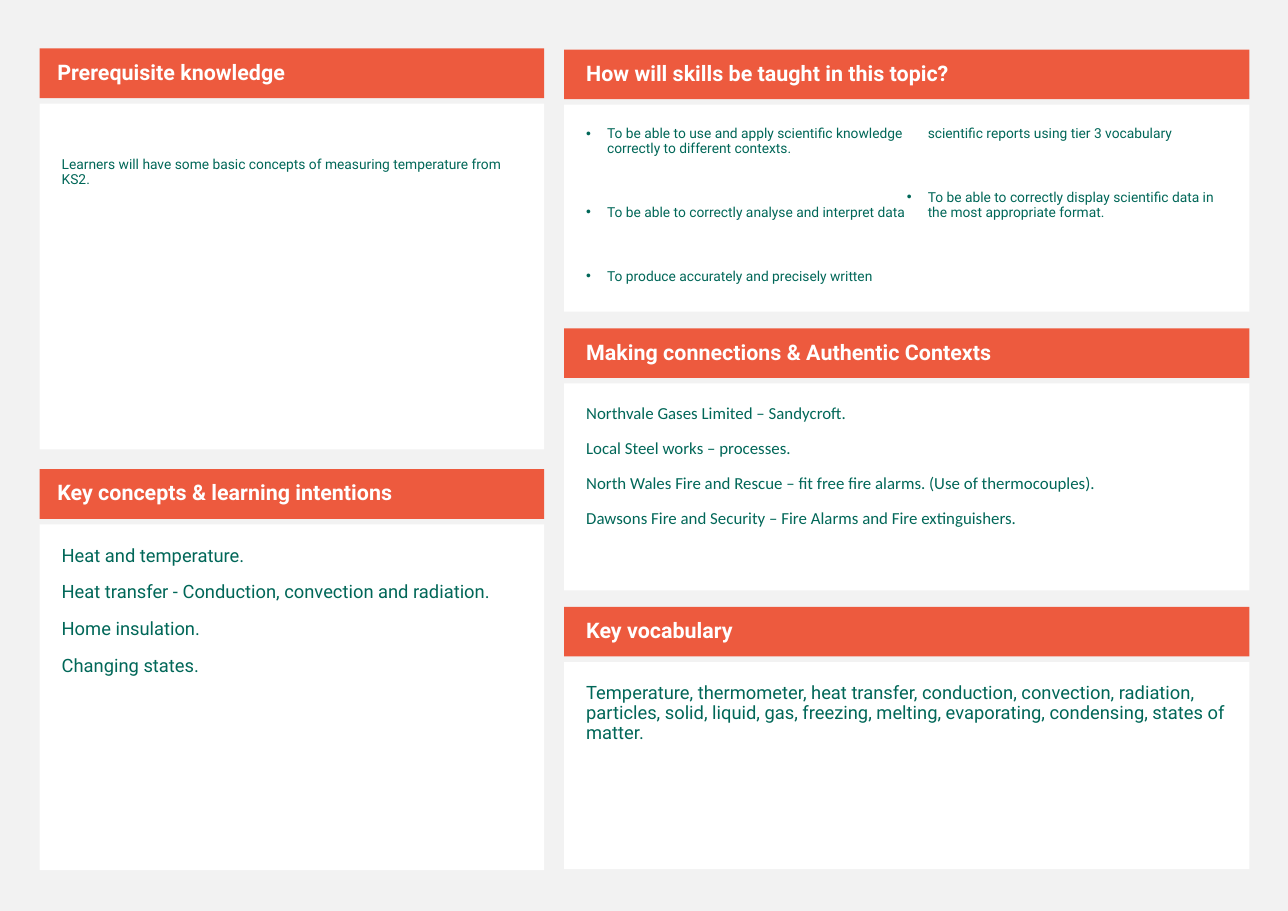
from dataclasses import dataclass

from lxml.etree import SubElement
from pptx import Presentation
from pptx.dml.color import RGBColor
from pptx.enum.text import MSO_ANCHOR, MSO_AUTO_SIZE, PP_ALIGN
from pptx.oxml.ns import qn
from pptx.util import Inches, Pt


@dataclass(frozen=True)
class Theme:
    back: str = "F2F2F2"
    panel: str = "FFFFFF"
    band: str = "ED5A3E"
    heading: str = "FFFFFF"
    body: str = "006758"
    font: str = "Roboto"
    alt_font: str = "Calibri"
    heading_size: int = 14
    large: int = 12
    medium: int = 11
    small: int = 9


T = Theme()

LEFT = [
    ("Prerequisite knowledge",
     ["Learners will have some basic concepts of measuring temperature from KS2."],
     dict(size=T.small, top=0.49)),
    ("Key concepts & learning intentions",
     ["Heat and temperature.",
      "Heat transfer - Conduction, convection and radiation.",
      "Home insulation.",
      "Changing states."],
     dict(size=T.large)),
]
RIGHT = [
    ("How will skills be taught in this topic?",
     ["To be able to use and apply scientific knowledge correctly to different contexts.",
      "To be able to correctly analyse and interpret data",
      "To produce accurately and precisely written scientific reports using tier 3 vocabulary",
      "To be able to correctly display scientific data in the most appropriate format."],
     dict(size=T.small, bullet="•", columns=2, before=32)),
    ("Making connections & Authentic Contexts",
     ["Northvale Gases Limited – Sandycroft.",
      "Local Steel works – processes.",
      "North Wales Fire and Rescue – fit free fire alarms. (Use of thermocouples).",
      "Dawsons Fire and Security – Fire Alarms and Fire extinguishers."],
     dict(size=T.medium, font=T.alt_font)),
    ("Key vocabulary",
     ["Temperature, thermometer, heat transfer, conduction, convection, radiation, "
      "particles, solid, liquid, gas, freezing, melting, evaporating, condensing, "
      "states of matter."],
     dict(size=T.large)),
]
COLUMNS = [
    dict(sections=LEFT, x=0.36, y=0.44, w=4.58, step=3.82, panel_h=3.14, indent=0.16),
    dict(sections=RIGHT, x=5.12, y=0.45, w=6.22, step=2.53, panel_h=1.88, indent=0.2),
]
BAND_H = 0.45
PANEL_DROP = 0.5


def write(sp, lines, size, font=T.font, color=T.body, bold=False, before=11,
          anchor=MSO_ANCHOR.TOP, left=0.2, top=0.2, right=0.2, bottom=0.2,
          bullet=None, columns=1):
    tf = sp.text_frame
    tf.word_wrap = True
    tf.auto_size = MSO_AUTO_SIZE.NONE
    tf.vertical_anchor = anchor
    tf.margin_left, tf.margin_top = Inches(left), Inches(top)
    tf.margin_right, tf.margin_bottom = Inches(right), Inches(bottom)
    if columns > 1:
        tf._txBody.bodyPr.set("numCol", str(columns))
    hang = Inches(0.19) if bullet else 0
    for i, line in enumerate(lines):
        p = tf.add_paragraph() if i else tf.paragraphs[0]
        p.alignment = PP_ALIGN.LEFT
        p.line_spacing = 0.9
        p.space_before, p.space_after = Pt(before), Pt(0)
        pPr = p._p.get_or_add_pPr()
        pPr.set("marL", str(hang))
        pPr.set("indent", str(-hang))
        if bullet:
            SubElement(pPr, qn("a:buFont"), typeface="Arial")
            SubElement(pPr, qn("a:buChar"), char=bullet)
        else:
            SubElement(pPr, qn("a:buNone"))
        r = p.add_run()
        r.text = line
        r.font.name, r.font.size, r.font.bold = font, Pt(size), bold
        r.font.color.rgb = RGBColor.from_string(color)


def place(s, pool, x, y, w, h, fill):
    box = [Inches(v) for v in (x, y, w, h)]
    if pool:
        sp = pool.pop(0)
        sp.left, sp.top, sp.width, sp.height = box
    else:
        sp = s.shapes.add_textbox(*box)
    sp.fill.solid()
    sp.fill.fore_color.rgb = RGBColor.from_string(fill)
    return sp


def main():
    prs = Presentation()
    prs.slide_width, prs.slide_height = Inches(11.69), Inches(8.27)
    s = prs.slides.add_slide(prs.slide_layouts.get_by_name("Comparison"))
    s.background.fill.solid()
    s.background.fill.fore_color.rgb = RGBColor.from_string(T.back)
    title, head_1, list_1, head_2, list_2 = s.placeholders
    headings, lists = [title, head_1, head_2], [list_1, list_2]

    for col in COLUMNS:
        x, w = col["x"], col["w"]
        for i, (heading, lines, style) in enumerate(col["sections"]):
            y = col["y"] + i * col["step"]
            panel = place(s, lists, x, y + PANEL_DROP, w, col["panel_h"], T.panel)
            write(panel, lines, **style)
            band = place(s, headings, x, y, w, BAND_H, T.band)
            write(band, [heading], size=T.heading_size, color=T.heading, bold=True,
                  anchor=MSO_ANCHOR.MIDDLE, left=col["indent"], top=0.05,
                  right=0.1, bottom=0.05)

    prs.save("out.pptx")


if __name__ == "__main__":
    main()
